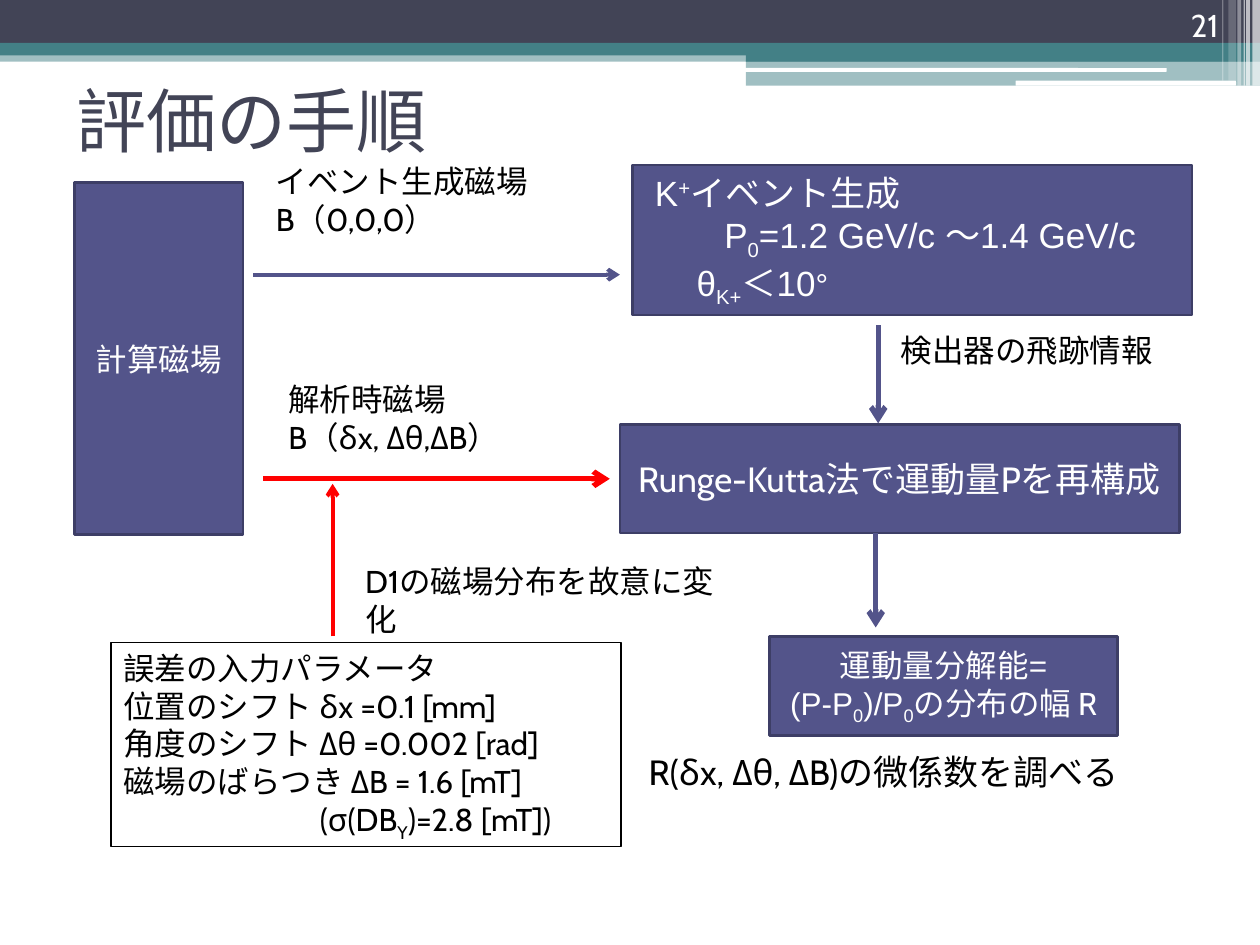
from lxml import etree
from pptx import Presentation
from pptx.dml.color import RGBColor
from pptx.enum.shapes import MSO_CONNECTOR, MSO_SHAPE
from pptx.enum.text import MSO_ANCHOR, PP_ALIGN
from pptx.oxml.ns import qn
from pptx.util import Inches, Pt

RECT, ROUND = MSO_SHAPE.RECTANGLE, MSO_SHAPE.ROUNDED_RECTANGLE
STRAIGHT = MSO_CONNECTOR.STRAIGHT
TOP, MIDDLE, BOTTOM = MSO_ANCHOR.TOP, MSO_ANCHOR.MIDDLE, MSO_ANCHOR.BOTTOM
LEFT, CENTER, RIGHT = PP_ALIGN.LEFT, PP_ALIGN.CENTER, PP_ALIGN.RIGHT

WHITE = RGBColor(0xFF, 0xFF, 0xFF)
BLACK = RGBColor(0x00, 0x00, 0x00)
RED = RGBColor(0xFF, 0x00, 0x00)
SLATE = RGBColor(0x42, 0x44, 0x56)
TEAL = RGBColor(0x43, 0x80, 0x86)
INDIGO = RGBColor(0x53, 0x54, 0x8A)
DARK_INDIGO = RGBColor(0x3D, 0x3E, 0x66)

SUB = {"baseline": -25000}
SUPER = {"baseline": 30000}


class SlideBuilder:
    font = {"name": "Cabin", "size": 18, "color": BLACK}

    def __init__(self, slide):
        self.slide = slide

    def shape(self, at, fill=None, opacity=100, outline=None, width=0.75, kind=RECT):
        shape = self.slide.shapes.add_shape(kind, *map(Inches, at))
        shape.shadow.inherit = False
        if fill is None:
            shape.fill.background()
        else:
            shape.fill.solid()
            shape.fill.fore_color.rgb = fill
        if opacity < 100:
            color = shape._element.spPr.find(qn("a:solidFill"))[0]
            etree.SubElement(color, qn("a:alpha")).set("val", str(opacity * 1000))
        if outline is None:
            shape.line.fill.background()
        else:
            shape.line.color.rgb = outline
            shape.line.width = Pt(width)
        return shape

    def fill_text(self, shape, lines, align=LEFT, anchor=TOP, indents=(), **font):
        frame = shape.text_frame
        settings = {"word_wrap": True, "vertical_anchor": anchor}
        for name, value in settings.items():
            setattr(frame, name, value)
        for index, line in enumerate(lines):
            para = frame.paragraphs[0] if index == 0 else frame.add_paragraph()
            para.alignment = align
            if indents:
                properties = para._p.get_or_add_pPr()
                properties.set("marL", str(Inches(indents[index])))
            for piece in [line] if isinstance(line, str) else line:
                text, change = (piece, {}) if isinstance(piece, str) else piece
                self.span(para, text, {**self.font, **font, **change})

    def span(self, para, text, style):
        span = para.add_run()
        span.text = text
        for name, value in {"name": style["name"], "size": Pt(style["size"])}.items():
            setattr(span.font, name, value)
        span.font.color.rgb = style["color"]
        if "baseline" in style:
            span._r.get_or_add_rPr().set("baseline", str(style["baseline"]))

    def step(self, at, lines, align=CENTER, **options):
        box = self.shape(at, INDIGO, outline=DARK_INDIGO, width=1.5)
        self.fill_text(box, lines, align, MIDDLE, color=WHITE, **options)

    def label(self, at, lines, **options):
        box = self.slide.shapes.add_textbox(*map(Inches, at))
        self.fill_text(box, lines, **options)

    def arrow(self, start, end, color, width):
        arrow = self.slide.shapes.add_connector(
            STRAIGHT, *map(Inches, (*start, *end)))
        arrow.line.color.rgb = color
        arrow.line.width = Pt(width)
        outline = arrow._element.spPr.find(qn("a:ln"))
        etree.SubElement(outline, qn("a:tailEnd")).set("type", "arrow")
        etree.SubElement(arrow._element.spPr, qn("a:effectLst"))


def draw_header(page):
    bands = [
        ((0, 0.4, 10, 0.09), TEAL, 50),
        ((0, 0, 10, 0.34), SLATE, 100),
        ((0, 0.34, 10, 0.1), TEAL, 100),
        ((5.92, 0.39, 4.08, 0.1), TEAL, 100),
        ((5.92, 0.48, 4.08, 0.2), TEAL, 50),
    ]
    for at, color, opacity in bands:
        page.shape(at, color, opacity)
    for at in [(5.91, 0.54, 3.35, 0.03), (8.06, 0.64, 1.75, 0.04)]:
        page.shape(at, WHITE, kind=ROUND)
    stripes = [
        (9.94, 0.06, 0.68, 65), (9.89, 0.03, 0.68, 65), (9.87, 0.01, 0.68, 60),
        (9.82, 0.03, 0.68, 40), (9.75, 0.06, 0.64, 20), (9.7, 0.01, 0.64, 30),
    ]
    for left, width, height, opacity in stripes:
        page.shape((left, 0, width, height), WHITE, opacity)
    page.label((0.51, 0.36, 9, 1.17), ["評価の手順"], anchor=MIDDLE, size=40, color=SLATE)
    page.label((8.94, 0, 0.83, 0.4), ["21"], align=RIGHT, anchor=BOTTOM, color=WHITE)


def draw_steps(page):
    page.step((5.02, 1.31, 4.44, 1.19), [
        ["K", ("+", SUPER), "イベント生成"],
        ["P", ("0", SUB), "=1.2 GeV/c ～1.4 GeV/c"],
        ["θ", ("K+", SUB), "＜10", ("°", {"size": 18})],
    ], align=LEFT, indents=(0.08, 0.63, 0.41), name="Arial", size=20)
    page.step((0.59, 1.45, 1.34, 2.79), ["計算磁場"])
    page.step((4.92, 3.37, 4.44, 0.86), ["Runge-Kutta法で運動量Pを再構成"], size=20)
    page.step((6.11, 5.05, 2.76, 0.79), [
        "運動量分解能=",
        ["(P-P", ("0", SUB), ")/P", ("0", SUB), ("の分布の幅 R", {"name": "Cabin"})],
    ], name="Arial")
    parameters = page.shape((0.88, 5.1, 4.05, 1.62), outline=BLACK)
    page.fill_text(parameters, [
        "誤差の入力パラメータ",
        "位置のシフト δx =0.1 [mm]",
        "角度のシフト Δθ =0.002 [rad]",
        "磁場のばらつき ΔB = 1.6 [mT]",
        ["(σ(DB", ("Y", SUB), ")=2.8 [mT])"],
    ], indents=(0, 0, 0, 0, 1.56))


def draw_flow(page):
    page.arrow((2.01, 2.18), (4.92, 2.18), INDIGO, 2.25)
    page.arrow((6.97, 2.58), (6.97, 3.36), INDIGO, 3)
    page.arrow((6.95, 4.23), (6.95, 4.98), INDIGO, 3)
    page.arrow((2.09, 3.8), (4.84, 3.8), RED, 3)
    page.arrow((2.64, 5.05), (2.64, 3.84), RED, 2.25)
    page.label((2.09, 1.24, 2.55, 0.71), ["イベント生成磁場", "B（0,0,0）"])
    page.label((2.19, 2.97, 2.55, 0.71), ["解析時磁場", "B（δx, Δθ,ΔB）"])
    page.label((7.05, 2.58, 3.46, 0.4), ["検出器の飛跡情報"])
    page.label((2.8, 4.41, 3.21, 0.4), ["D1の磁場分布を故意に変化"])
    page.label((5.05, 5.91, 5.87, 0.44), ["R(δx, Δθ, ΔB)の微係数を調べる"], size=20)


def main():
    deck = Presentation()
    deck.slide_width, deck.slide_height = Inches(10), Inches(7.5)
    page = SlideBuilder(deck.slides.add_slide(deck.slide_layouts[6]))
    draw_header(page)
    draw_steps(page)
    draw_flow(page)
    deck.save("out.pptx")


if __name__ == "__main__":
    main()
